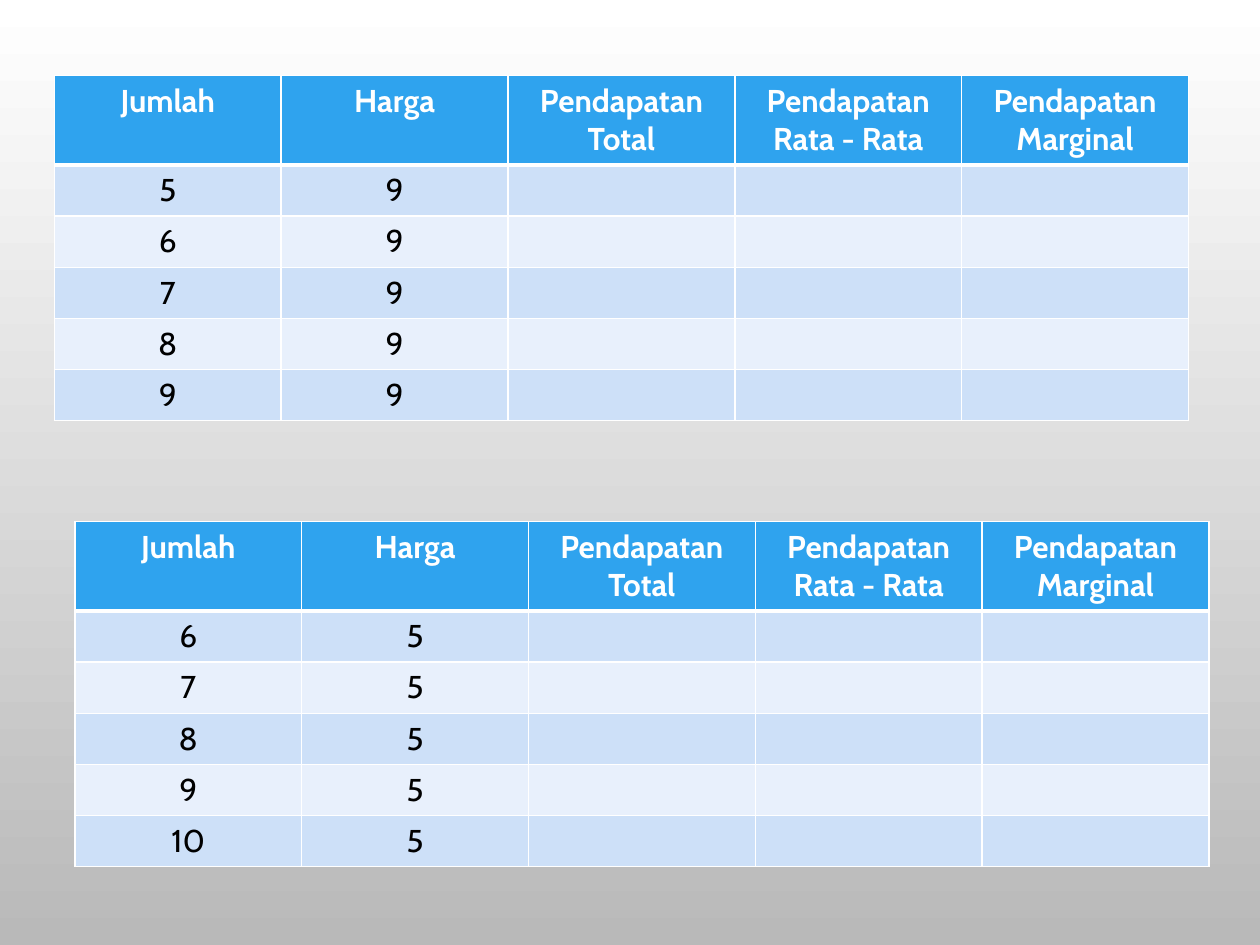
from itertools import product

from lxml.etree import SubElement
from pptx import Presentation
from pptx.dml.color import RGBColor
from pptx.enum.text import PP_ALIGN
from pptx.oxml.ns import qn
from pptx.util import Inches, Pt

SLIDE_WIDTH, SLIDE_HEIGHT = Inches(10), Inches(7.5)
COLUMN = int(SLIDE_WIDTH * 0.18)
ROW = int(SLIDE_HEIGHT / 18.5)

WHITE, BLACK, GREY = "FFFFFF", "000000", "B9B9B9"
HEADER_BLUE = "2FA3EE"
BANDS = ["CDE0F8", "E8F0FC"]

HEADINGS = ["Jumlah", "Harga", "Pendapatan Total",
            "Pendapatan Rata - Rata", "Pendapatan Marginal"]
HEADING_FONT = {"name": "Cabin", "size": Pt(18), "bold": True}
FIGURE_FONT = {**HEADING_FONT, "bold": False}


def color(hex_value):
    return RGBColor.from_string(hex_value)


def paint_background(slide):
    fill = slide.background.fill
    fill.gradient()
    fill.gradient_angle = 270
    for stop, shade in zip(fill.gradient_stops, [WHITE, GREY]):
        stop.color.rgb = color(shade)


def draw_borders(cell, widths):
    properties = cell._tc.get_or_add_tcPr()
    for position, (side, width) in enumerate(widths.items()):
        line = properties.makeelement(qn(f"a:{side}"), {"w": str(Pt(width))})
        solid = SubElement(line, qn("a:solidFill"))
        SubElement(solid, qn("a:srgbClr"), val=WHITE)
        properties.insert(position, line)


def format_cell(cell, content, font_values, ink, shade, widths):
    cell.text = content
    cell.fill.solid()
    cell.fill.fore_color.rgb = color(shade)
    paragraph = cell.text_frame.paragraphs[0]
    paragraph.alignment = PP_ALIGN.CENTER
    for key, value in font_values.items():
        setattr(paragraph.font, key, value)
    paragraph.font.color.rgb = color(ink)
    for run in paragraph.runs:
        for key, value in font_values.items():
            setattr(run.font, key, value)
        run.font.color.rgb = color(ink)
    draw_borders(cell, widths)


def add_revenue_table(slide, left, top, quantities, price):
    columns, rows = len(HEADINGS), len(quantities) + 1
    revenue = slide.shapes.add_table(
        rows, columns, int(left * COLUMN), int(top * ROW),
        columns * COLUMN, rows * ROW).table
    for row in revenue.rows:
        row.height = ROW
    for row, column in product(range(rows), range(columns)):
        cell = revenue.cell(row, column)
        widths = {"lnL": 1, "lnR": 1, "lnT": 3 if row == 1 else 1,
                  "lnB": 3 if row == 0 else 1}
        if row == 0:
            format_cell(cell, HEADINGS[column], HEADING_FONT, WHITE,
                        HEADER_BLUE, widths)
        else:
            figures = [str(quantities[row - 1]), str(price)]
            content = figures[column] if column < len(figures) else ""
            format_cell(cell, content, FIGURE_FONT, BLACK,
                        BANDS[(row - 1) % 2], widths)


def main():
    presentation = Presentation()
    presentation.slide_width = SLIDE_WIDTH
    presentation.slide_height = SLIDE_HEIGHT
    slide = presentation.slides.add_slide(presentation.slide_layouts[6])
    paint_background(slide)
    add_revenue_table(slide, 0.24, 1.48, range(5, 10), 9)
    add_revenue_table(slide, 0.33, 10.21, range(6, 11), 5)
    presentation.save("out.pptx")


if __name__ == "__main__":
    main()
